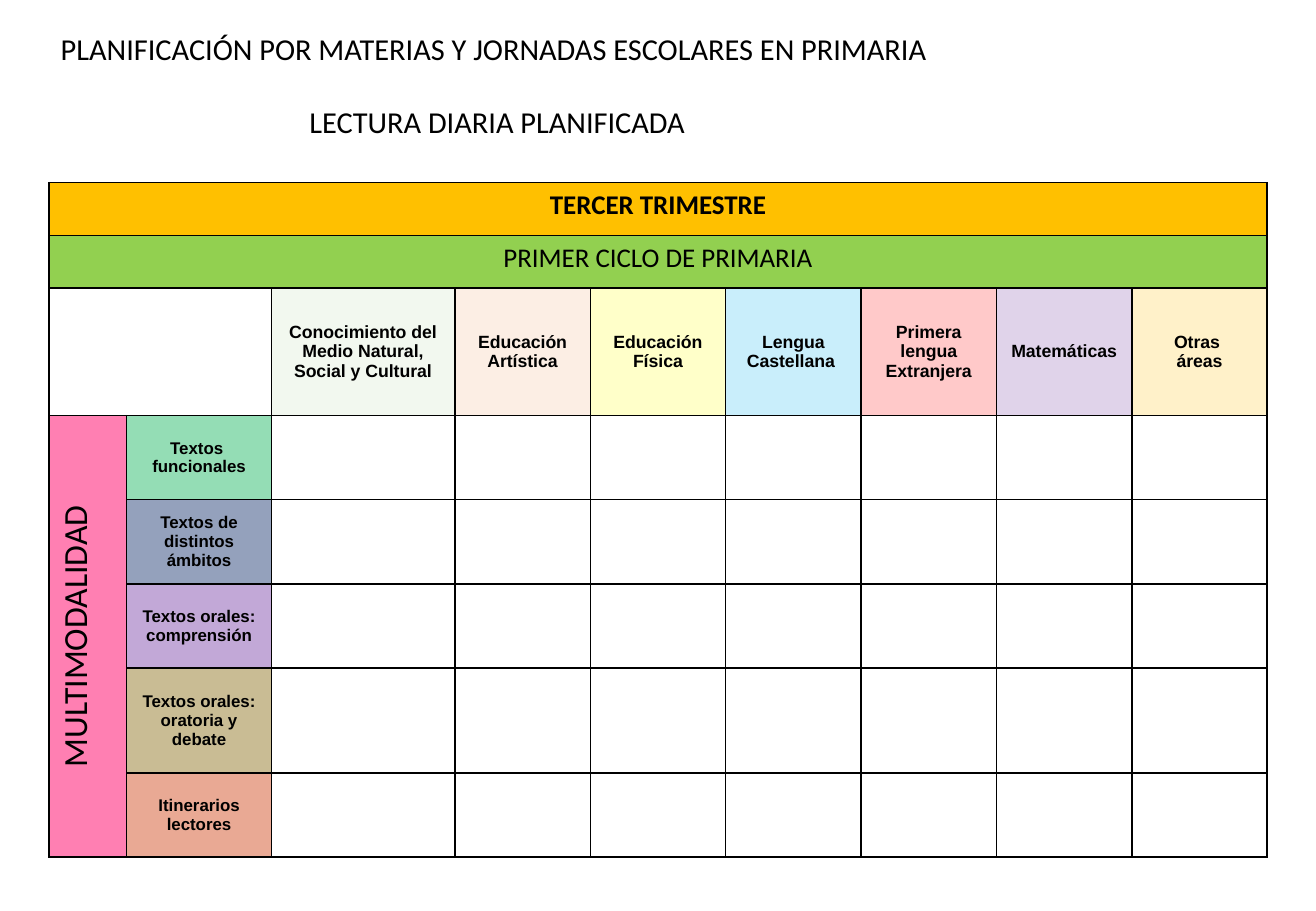
from lxml import etree
from pptx import Presentation
from pptx.dml.color import RGBColor
from pptx.enum.text import MSO_ANCHOR, PP_ALIGN
from pptx.oxml.ns import qn
from pptx.util import Cm, Pt

LEFT, CENTER = PP_ALIGN.LEFT, PP_ALIGN.CENTER
TOP, MIDDLE = MSO_ANCHOR.TOP, MSO_ANCHOR.MIDDLE

BLACK = RGBColor(0x00, 0x00, 0x00)
WHITE = RGBColor(0xFF, 0xFF, 0xFF)
AMBER = RGBColor(0xFF, 0xC0, 0x00)
LIME = RGBColor(0x92, 0xD0, 0x50)
SAGE = RGBColor(0xC5, 0xE0, 0xB4)
PEACH = RGBColor(0xF4, 0xB1, 0x83)
YELLOW = RGBColor(0xFF, 0xFF, 0x00)
SKY = RGBColor(0x00, 0xB0, 0xF0)
RED = RGBColor(0xFF, 0x00, 0x00)
PURPLE = RGBColor(0x70, 0x30, 0xA0)
PINK = RGBColor(0xFF, 0x00, 0x66)
GREEN = RGBColor(0x00, 0xB0, 0x50)
NAVY = RGBColor(0x00, 0x20, 0x60)
OLIVE = RGBColor(0x80, 0x60, 0x00)
RUST = RGBColor(0xCC, 0x33, 0x00)

SUBJECTS = [
    ("Conocimiento del Medio Natural, Social y Cultural", SAGE),
    ("Educación\nArtística", PEACH),
    ("Educación Física", YELLOW),
    ("Lengua Castellana ", SKY),
    ("Primera lengua Extranjera", RED),
    ("Matemáticas", PURPLE),
    ("Otras \náreas", AMBER),
]
TEXT_TYPES = [
    ("Textos \nfuncionales", GREEN),
    ("Textos de distintos ámbitos", NAVY),
    ("Textos orales: comprensión", PURPLE),
    ("Textos orales: oratoria y debate", OLIVE),
    ("Itinerarios lectores", RUST),
]
COLUMN_WIDTHS = [1.63, 3.02, 3.84] + [2.83] * 6
ROW_HEIGHTS = [1.1, 1.1, 2.67, 1.76, 1.76, 1.76, 2.19, 1.76]
SUBJECT_ROW, FIRST_TYPE_ROW = 2, 3
TYPE_COLUMN, FIRST_SUBJECT_COLUMN = 1, 2


def write_text(frame, text, font="Calibri", size=18, bold=False, align=CENTER):
    """Write each line of text as a paragraph."""
    for index, line in enumerate(text.split("\n")):
        para = frame.add_paragraph() if index else frame.paragraphs[0]
        para.alignment = align
        span = para.add_run()
        span.text = line
        span.font.name = font
        span.font.size = Pt(size)
        span.font.bold = bold
        span.font.color.rgb = BLACK


def fill_cell(cell, color, opacity=100):
    """Fill a cell; opacity is a percentage."""
    cell.fill.solid()
    cell.fill.fore_color.rgb = color
    if opacity < 100:
        fill = cell._tc.get_or_add_tcPr().find(qn("a:solidFill"))
        etree.SubElement(fill[0], qn("a:alpha"), val=str(opacity * 1000))


deck = Presentation()
deck.slide_width, deck.slide_height = Cm(27.51), Cm(19.05)
page = deck.slides.add_slide(deck.slide_layouts[6])

# Heading
heading = page.shapes.add_textbox(Cm(1.02), Cm(0.51), Cm(18.75), Cm(2.57))
heading.text_frame.word_wrap = True
write_text(
    heading.text_frame,
    "PLANIFICACIÓN POR MATERIAS Y JORNADAS ESCOLARES EN PRIMARIA\n"
    "LECTURA DIARIA PLANIFICADA",
)
first_line, second_line = heading.text_frame.paragraphs
first_line.alignment = LEFT
second_line.space_before = Pt(21.5)

# Planning grid
grid = page.shapes.add_table(
    len(ROW_HEIGHTS), len(COLUMN_WIDTHS), Cm(1.02), Cm(3.82),
    Cm(sum(COLUMN_WIDTHS)), Cm(sum(ROW_HEIGHTS)),
).table
grid.first_row = grid.horz_banding = False
for column, width in zip(grid.columns, COLUMN_WIDTHS):
    column.width = Cm(width)
for row, height in zip(grid.rows, ROW_HEIGHTS):
    row.height = Cm(height)

for cell in grid.iter_cells():
    properties = cell._tc.get_or_add_tcPr()
    for side in ("a:lnL", "a:lnR", "a:lnT", "a:lnB"):
        border = etree.SubElement(properties, qn(side), w=str(Pt(1)))
        paint = etree.SubElement(border, qn("a:solidFill"))
        etree.SubElement(paint, qn("a:srgbClr"), val=str(BLACK))
    cell.vertical_anchor = MIDDLE
    fill_cell(cell, WHITE)

# Banner rows
banners = [("TERCER TRIMESTRE", AMBER, True), ("PRIMER CICLO DE PRIMARIA", LIME, False)]
for row_index, (text, color, bold) in enumerate(banners):
    cell = grid.cell(row_index, 0)
    cell.merge(grid.cell(row_index, len(COLUMN_WIDTHS) - 1))
    cell.vertical_anchor = TOP
    fill_cell(cell, color)
    write_text(cell.text_frame, text, size=16, bold=bold)

# Subject headings
grid.cell(SUBJECT_ROW, 0).merge(grid.cell(SUBJECT_ROW, TYPE_COLUMN))
for column_index, (text, color) in enumerate(SUBJECTS, FIRST_SUBJECT_COLUMN):
    cell = grid.cell(SUBJECT_ROW, column_index)
    fill_cell(cell, color, opacity=21)
    write_text(cell.text_frame, text, font="Arial", size=10.5, bold=True)

# Text types and their vertical heading
multimodality = grid.cell(FIRST_TYPE_ROW, 0)
multimodality.merge(grid.cell(len(ROW_HEIGHTS) - 1, 0))
multimodality._tc.get_or_add_tcPr().set("vert", "vert270")
fill_cell(multimodality, PINK, opacity=50)
write_text(multimodality.text_frame, "MULTIMODALIDAD", size=20)
for row_index, (text, color) in enumerate(TEXT_TYPES, FIRST_TYPE_ROW):
    cell = grid.cell(row_index, TYPE_COLUMN)
    fill_cell(cell, color, opacity=42)
    write_text(cell.text_frame, text, font="Arial", size=10, bold=True)

deck.save("out.pptx")
